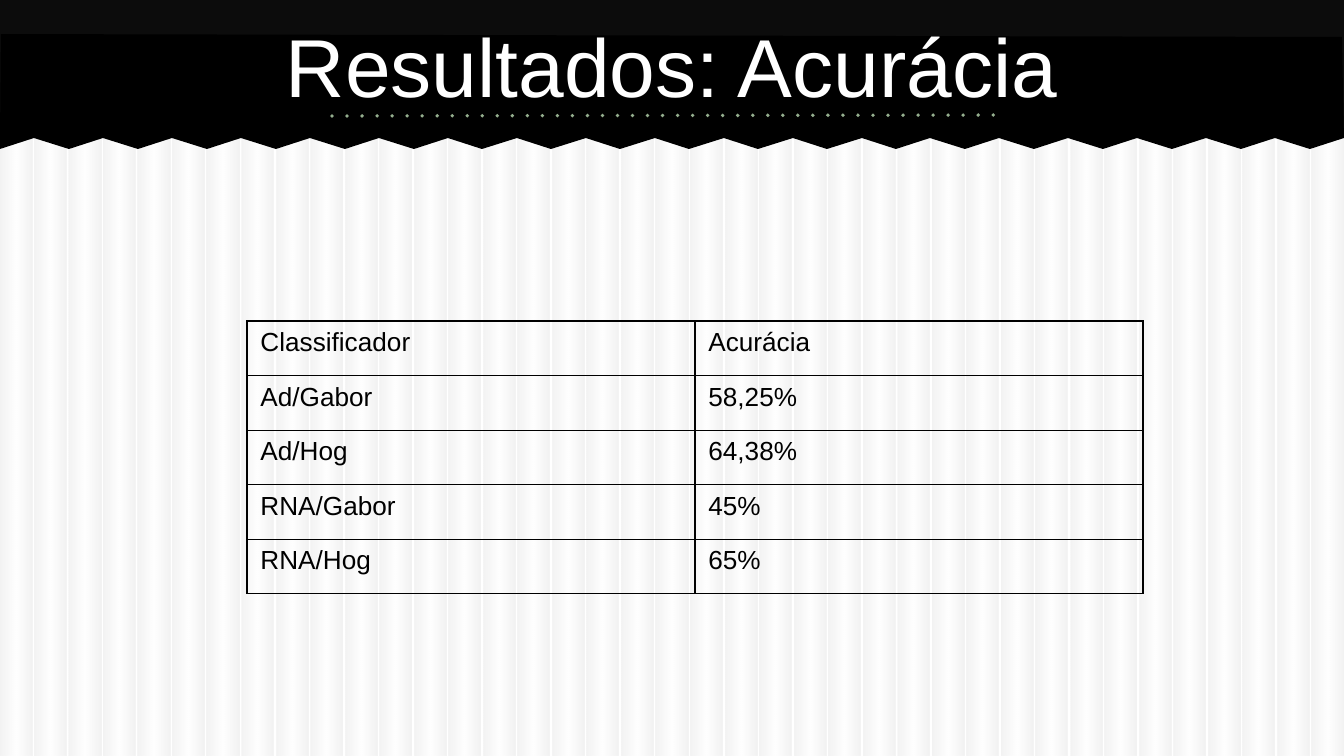
from lxml import etree
from pptx import Presentation
from pptx.dml.color import RGBColor
from pptx.enum.dml import MSO_LINE_DASH_STYLE as Dash
from pptx.enum.shapes import MSO_CONNECTOR as Connector, MSO_SHAPE as Preset
from pptx.enum.text import MSO_ANCHOR as Anchor, PP_ALIGN as Align
from pptx.oxml.ns import qn
from pptx.util import Pt

TITLE = "Resultados: Acurácia"
ROWS = [
    ("Classificador", "Acurácia"),
    ("Ad/Gabor", "58,25%"),
    ("Ad/Hog", "64,38%"),
    ("RNA/Gabor", "45%"),
    ("RNA/Hog", "65%"),
]

BLACK = RGBColor(0x00, 0x00, 0x00)
WHITE = RGBColor(0xFF, 0xFF, 0xFF)
CHARCOAL = RGBColor(0x0C, 0x0C, 0x0C)
SAGE = RGBColor(0x94, 0xAE, 0x8E)
GREY = RGBColor(0xBF, 0xBF, 0xBF)

PX = 914400 / 134.4
PAGE_WIDTH, PAGE_HEIGHT = 1344, 756
STRIPE_COUNT, STRIPE_WIDTH, LAST_STRIPE = 39, 32, 1312
STRIPE_STOPS = [(0, GREY), (50, WHITE), (97, GREY), (100, GREY)]
STRIPE_OPACITY = 19
TOOTH_COUNT, TOOTH_TIP, TOOTH_NOTCH = 39, 149, 138
BORDER_WIDTH = Pt(0.75)

TITLE_FONT = {"name": "Arial", "size": Pt(44)}
TABLE_FONT = {"name": "Arial", "size": Pt(14)}


def emu(*lengths):
    return [round(length * PX) for length in lengths]


def add_color(parent, color):
    fill = etree.SubElement(parent, qn("a:srgbClr"), val=str(color))
    return fill


def set_font(span, color, formats):
    for name, value in formats.items():
        setattr(span.font, name, value)
    span.font.color.rgb = color


def add_plain_rectangle(page, *bounds):
    shape = page.shapes.add_shape(Preset.RECTANGLE, *emu(*bounds))
    shape.shadow.inherit = False
    shape.line.fill.background()
    return shape


def add_stripes(page):
    for index in range(STRIPE_COUNT):
        left = LAST_STRIPE * index / (STRIPE_COUNT - 1)
        stripe = add_plain_rectangle(page, left, 1, STRIPE_WIDTH, PAGE_HEIGHT - 1)
        gradient = etree.Element(qn("a:gradFill"), rotWithShape="1")
        stops = etree.SubElement(gradient, qn("a:gsLst"))
        for position, color in STRIPE_STOPS:
            stop = etree.SubElement(stops, qn("a:gs"), pos=str(position * 1000))
            etree.SubElement(add_color(stop, color), qn("a:alpha"),
                             val=str(STRIPE_OPACITY * 1000))
        etree.SubElement(gradient, qn("a:lin"), ang="0", scaled="0")
        stripe._element.spPr.find(qn("a:prstGeom")).addnext(gradient)


def add_banner(page):
    """Draw the dark header with its zigzag lower edge and dotted rule."""
    band = add_plain_rectangle(page, 0, 0, PAGE_WIDTH, 137)
    band.fill.solid()
    band.fill.fore_color.rgb = CHARCOAL

    teeth = [(PAGE_WIDTH * index / TOOTH_COUNT, TOOTH_NOTCH if index % 2 else TOOTH_TIP)
             for index in range(TOOTH_COUNT + 1)]
    builder = page.shapes.build_freeform(1, 34, scale=PX)
    builder.add_line_segments([(1342, 37)] + teeth[::-1], close=True)
    zigzag = builder.convert_to_shape()
    zigzag.shadow.inherit = False
    zigzag.fill.solid()
    zigzag.fill.fore_color.rgb = BLACK
    zigzag.line.fill.background()

    rule = page.shapes.add_connector(Connector.STRAIGHT, *emu(332, 116, 1008, 115))
    rule.line.color.rgb = SAGE
    rule.line.width = Pt(2)
    rule.line.dash_style = Dash.ROUND_DOT
    rule.line._get_or_add_ln().set("cap", "rnd")
    rule.line._get_or_add_ln().find(qn("a:prstDash")).set("val", "dot")
    etree.SubElement(rule._element.spPr, qn("a:effectLst"))


def add_title(page):
    box = page.shapes.add_textbox(*emu(67, 1, 1210, 127))
    frame = box.text_frame
    frame.word_wrap = True
    frame.vertical_anchor = Anchor.MIDDLE
    para = frame.paragraphs[0]
    para.alignment = Align.CENTER
    span = para.add_run()
    span.text = TITLE
    set_font(span, WHITE, TITLE_FONT)


def add_borders(cell):
    properties = cell._tc.get_or_add_tcPr()
    for position, side in enumerate(("lnL", "lnR", "lnT", "lnB")):
        border = etree.Element(qn(f"a:{side}"), w=str(BORDER_WIDTH))
        add_color(etree.SubElement(border, qn("a:solidFill")), BLACK)
        properties.insert(position, border)


def add_results(page):
    table = page.shapes.add_table(len(ROWS), len(ROWS[0]), *emu(247, 321, 896, 273)).table
    table.first_row = table.horz_banding = False
    for row, texts in enumerate(ROWS):
        for column, text in enumerate(texts):
            cell = table.cell(row, column)
            cell.fill.background()
            add_borders(cell)
            span = cell.text_frame.paragraphs[0].add_run()
            span.text = text
            set_font(span, BLACK, TABLE_FONT)


def main():
    deck = Presentation()
    deck.slide_width, deck.slide_height = emu(PAGE_WIDTH, PAGE_HEIGHT)
    page = deck.slides.add_slide(deck.slide_layouts[6])
    add_stripes(page)
    add_banner(page)
    add_title(page)
    add_results(page)
    deck.save("out.pptx")


if __name__ == "__main__":
    main()
